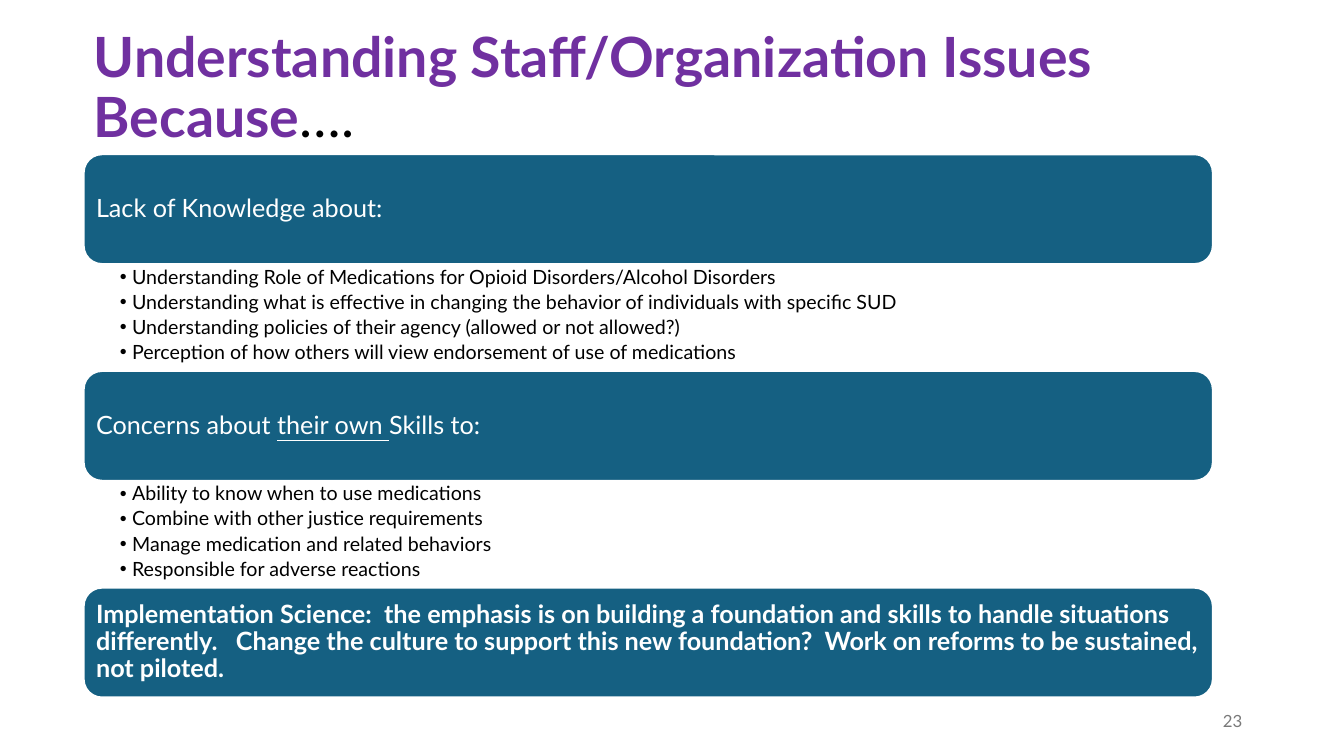
from pptx import Presentation
from pptx import util as u
from pptx.dml.color import RGBColor
from pptx.enum import shapes, text

COLORS = {"title": "7030A0", "ink": "000000", "bar": "156082", "white": "FFFFFF", "number": "797979"}
LEFT, TOP, WIDTH = 0.83, 1.53, 11.2
BAR_H, LIST_H = 1.09, 1.06
SECTIONS = [
    ([("Lack of Knowledge about:", {})],
     ["Understanding Role of Medications for Opioid Disorders/Alcohol Disorders",
      "Understanding what is effective in changing the behavior of individuals with specific SUD",
      "Understanding policies of their agency (allowed or not allowed?)",
      "Perception of how others will view endorsement of use of medications"]),
    ([("Concerns about ", {}), ("their own ", {"underline": True}), ("Skills to:", {})],
     ["Ability to know when to use medications",
      "Combine with other justice requirements",
      "Manage medication and related behaviors",
      "Responsible for adverse reactions"]),
]
CONCLUSION = ("Implementation Science:  the emphasis is on building a foundation and skills "
              "to handle situations differently.   Change the culture to support this new "
              "foundation?  Work on reforms to be sustained, not piloted.")


def set_all(obj, values):
    """Set every attribute of an object from a dict."""
    for name, value in values.items():
        setattr(obj, name, value)


def place(sp, box):
    """Move a shape to a box given in inches."""
    set_all(sp, dict(zip(("left", "top", "width", "height"), map(u.Inches, box))))


def set_frame(tf, anchor, insets=(0.1, 0.05, 0.1, 0.05)):
    """Format a text frame with its anchor and insets in inches."""
    sides = ("margin_left", "margin_top", "margin_right", "margin_bottom")
    set_all(tf, {"word_wrap": True, "auto_size": text.MSO_AUTO_SIZE.NONE, "vertical_anchor": anchor})
    set_all(tf, dict(zip(sides, map(u.Inches, insets))))


def write(p, runs, size, color, align=text.PP_ALIGN.LEFT, spacing=0.9, after=0):
    """Fill a paragraph with runs of text and font overrides."""
    set_all(p, {"alignment": align, "line_spacing": spacing,
                "space_before": u.Pt(0), "space_after": u.Pt(after)})
    for words, extra in runs:
        r = p.add_run()
        r.text = words
        font = {"name": "Lato", "size": u.Pt(size), "bold": False, "color": color, **extra}
        r.font.color.rgb = RGBColor.from_string(COLORS[font.pop("color")])
        set_all(r.font, font)


def add_title(s, box):
    """Fill the title placeholder."""
    sp = s.shapes.title
    place(sp, box)
    set_frame(sp.text_frame, text.MSO_ANCHOR.MIDDLE)
    write(sp.text_frame.paragraphs[0],
          [("Understanding Staff/Organization Issues Because", {"bold": True, "color": "title"}),
           ("….", {})], 39.6, "ink")


def add_bar(s, box, runs):
    """Draw a rounded heading bar with its text."""
    sp = s.shapes.add_shape(shapes.MSO_SHAPE.ROUNDED_RECTANGLE, *map(u.Inches, box))
    sp.shadow.inherit = False
    sp.fill.solid()
    sp.fill.fore_color.rgb = RGBColor.from_string(COLORS["bar"])
    sp.line.color.rgb = RGBColor.from_string(COLORS["white"])
    sp.line.width = u.Pt(1.5)
    set_frame(sp.text_frame, text.MSO_ANCHOR.MIDDLE, (0.07,) * 4)
    write(sp.text_frame.paragraphs[0], runs, 18, "white")


def fill_list(sp, box, items):
    """Fill a body placeholder with a bulleted list."""
    place(sp, box)
    tf = sp.text_frame
    set_frame(tf, text.MSO_ANCHOR.TOP, (0.36, 0.03, 0.14, 0.03))
    for i, item in enumerate(items):
        p = tf.add_paragraph() if i else tf.paragraphs[0]
        write(p, [(item, {})], 14, "ink", after=2.8)
        pPr = p._p.get_or_add_pPr()
        pPr.set("marL", str(u.Inches(0.12)))
        pPr.set("indent", str(-u.Inches(0.12)))


def add_section(s, sp, box, runs, items):
    """Place a heading bar with its list below it."""
    x, y, w, h = box
    add_bar(s, (x, y, w, BAR_H), runs)
    fill_list(sp, (x, y + BAR_H, w, h - BAR_H), items)


def add_number(s, box):
    """Write the slide number."""
    tf = s.shapes.add_textbox(*map(u.Inches, box)).text_frame
    set_frame(tf, text.MSO_ANCHOR.MIDDLE)
    write(tf.paragraphs[0], [("23", {})], 12, "number", text.PP_ALIGN.RIGHT, 1.0)


def main():
    """Build the slide and save it."""
    prs = Presentation()
    set_all(prs, {"slide_width": u.Inches(13.33), "slide_height": u.Inches(7.5)})
    s = prs.slides.add_slide(prs.slide_layouts.get_by_name("Two Content"))
    add_title(s, (LEFT, 0.53, 11.94, 0.72))
    step = BAR_H + LIST_H
    for i, (runs, items) in enumerate(SECTIONS):
        add_section(s, s.placeholders[i + 1], (LEFT, TOP + i * step, WIDTH, step), runs, items)
    add_bar(s, (LEFT, TOP + len(SECTIONS) * step, WIDTH, BAR_H), [(CONCLUSION, {"bold": True})])
    add_number(s, (9.42, 6.95, 3, 0.4))
    prs.save("out.pptx")


if __name__ == "__main__":
    main()
